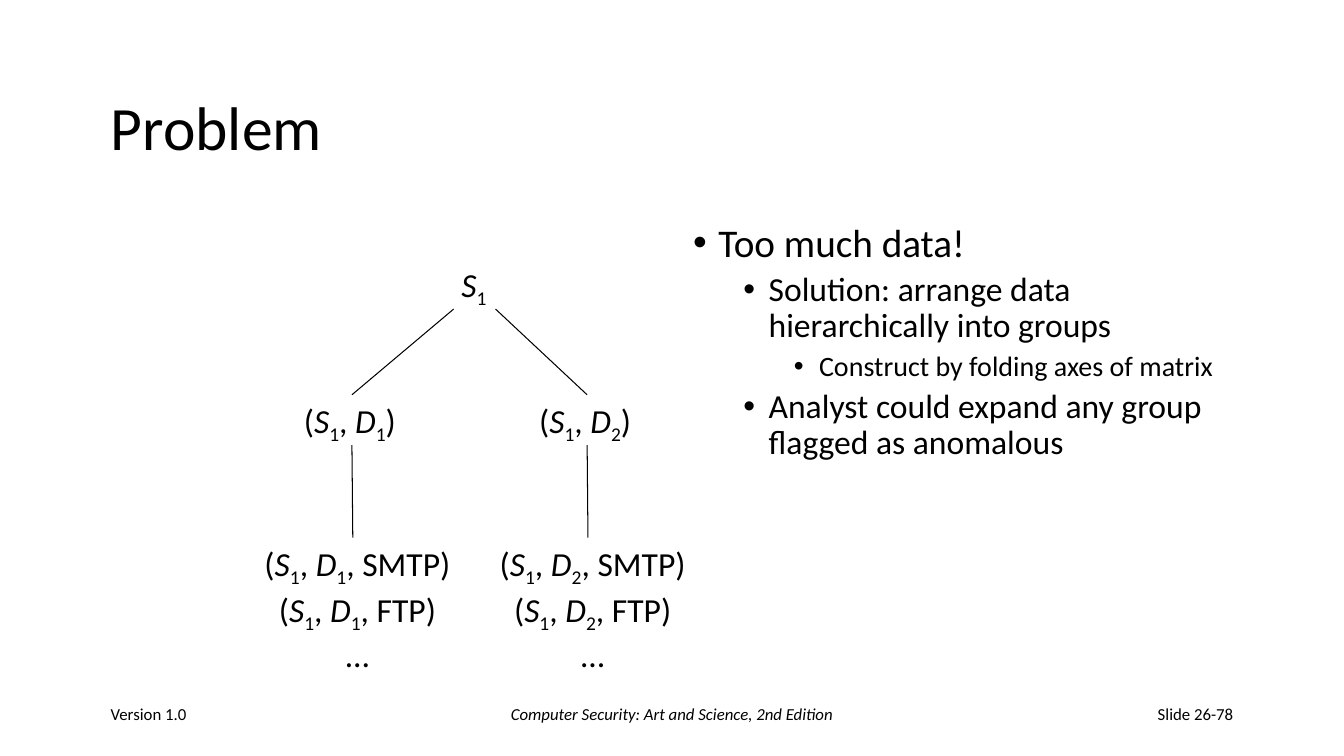
"""Build the "Problem" slide: a tree of grouped traffic data beside a bullet list."""
from lxml.etree import SubElement
from pptx import Presentation
from pptx.dml.color import RGBColor
from pptx.enum.shapes import MSO_CONNECTOR
from pptx.enum.text import MSO_ANCHOR, MSO_AUTO_SIZE, PP_ALIGN
from pptx.oxml.ns import qn
from pptx.util import Inches, Pt

BLACK = RGBColor(0, 0, 0)
FONT = "Calibri"
CELLS_PER_INCH = 12


def grid(*cells):
    """Turn grid cells into lengths."""
    return [Inches(cell / CELLS_PER_INCH) for cell in cells]


def add_text(paragraph, pieces, size, italic=False):
    """Add one run per piece; lone letters are italic, lone digits subscripts."""
    for piece in pieces:
        run = paragraph.add_run()
        run.text = piece
        run.font.name = FONT
        run.font.size = Pt(size)
        run.font.color.rgb = BLACK
        run.font.italic = italic or piece in ("S", "D")
        if piece in ("1", "2"):
            run.font._element.set("baseline", "-25000")


deck = Presentation()
deck.slide_width, deck.slide_height = grid(160, 90)
slide = deck.slides.add_slide(deck.slide_layouts[5])
shapes = slide.shapes

title = shapes.title
title.left, title.top, title.width, title.height = grid(12, 8, 136, 15)
title.text_frame.auto_size = MSO_AUTO_SIZE.NONE
title.text_frame.vertical_anchor = MSO_ANCHOR.MIDDLE
heading = title.text_frame.paragraphs[0]
heading.alignment = PP_ALIGN.LEFT
heading.line_spacing = 0.9
add_text(heading, ["Problem"], 44)

points = [
    (0, 28, "Too much data!"),
    (1, 24, "Solution: arrange data hierarchically into groups"),
    (2, 20, "Construct by folding axes of matrix"),
    (1, 24, "Analyst could expand any group flagged as anomalous"),
]
argument = shapes.add_textbox(*grid(81.33, 26, 66.67, 54)).text_frame
argument.word_wrap = True
for index, (level, size, wording) in enumerate(points):
    point = argument.add_paragraph() if index else argument.paragraphs[0]
    point.level = level
    point.line_spacing = 0.9
    point.space_before = Pt(5 if index else 0)
    properties = point._p.get_or_add_pPr()
    properties.set("marL", str(Inches(0.25 + 0.5 * level)))
    properties.set("indent", str(Inches(-0.25)))
    SubElement(properties, qn("a:buFont"), typeface="Arial")
    SubElement(properties, qn("a:buChar"), char="•")
    add_text(point, [wording], size)

nodes = {"root": (grid(53.75, 30.8, 5.64, 6), PP_ALIGN.LEFT, [["S", "1"]])}
for branch, left in (("1", 30), ("2", 58)):
    pair = ["(", "S", "1", ", ", "D", branch]
    nodes["leaves" + branch] = (
        grid(left, 64, 25.1, 15.7),
        PP_ALIGN.CENTER,
        [pair + [", SMTP)"], pair + [", FTP)"], ["…"]],
    )
    nodes["pair" + branch] = (grid(left + 5, 47, 13.8, 6), PP_ALIGN.LEFT, [pair + [")"]])

tree = {}
for name, (place, alignment, lines) in nodes.items():
    tree[name] = shapes.add_textbox(*place)
    label = tree[name].text_frame
    label.word_wrap = False
    label.auto_size = MSO_AUTO_SIZE.SHAPE_TO_FIT_TEXT
    for index, pieces in enumerate(lines):
        line = label.add_paragraph() if index else label.paragraphs[0]
        line.alignment = alignment
        add_text(line, pieces, 24)

for branch, root_x, pair_x in (("1", 54, 42), ("2", 59, 70)):
    pair = tree["pair" + branch]
    from_root = shapes.add_connector(MSO_CONNECTOR.STRAIGHT, *grid(root_x, 36.8, pair_x, 47))
    from_root.end_connect(pair, 0)
    to_leaves = shapes.add_connector(MSO_CONNECTOR.STRAIGHT, *grid(pair_x, 53, pair_x, 64))
    to_leaves.begin_connect(pair, 2)
    for edge in (from_root, to_leaves):
        edge.line.color.rgb = BLACK
        edge.line.width = Pt(0.75)
        SubElement(edge._element.spPr, qn("a:effectLst"))

footers = [
    (12, 33.33, PP_ALIGN.LEFT, False, "Version 1.0"),
    (54.67, 50.67, PP_ALIGN.CENTER, True, "Computer Security: Art and Science, 2nd Edition"),
    (114.67, 33.33, PP_ALIGN.RIGHT, False, "Slide 26-78"),
]
for left, width, alignment, italic, wording in footers:
    footer = shapes.add_textbox(*grid(left, 82, width, 6)).text_frame
    footer.word_wrap = True
    footer.vertical_anchor = MSO_ANCHOR.MIDDLE
    footer.paragraphs[0].alignment = alignment
    add_text(footer.paragraphs[0], [wording], 12, italic)

deck.save("out.pptx")
